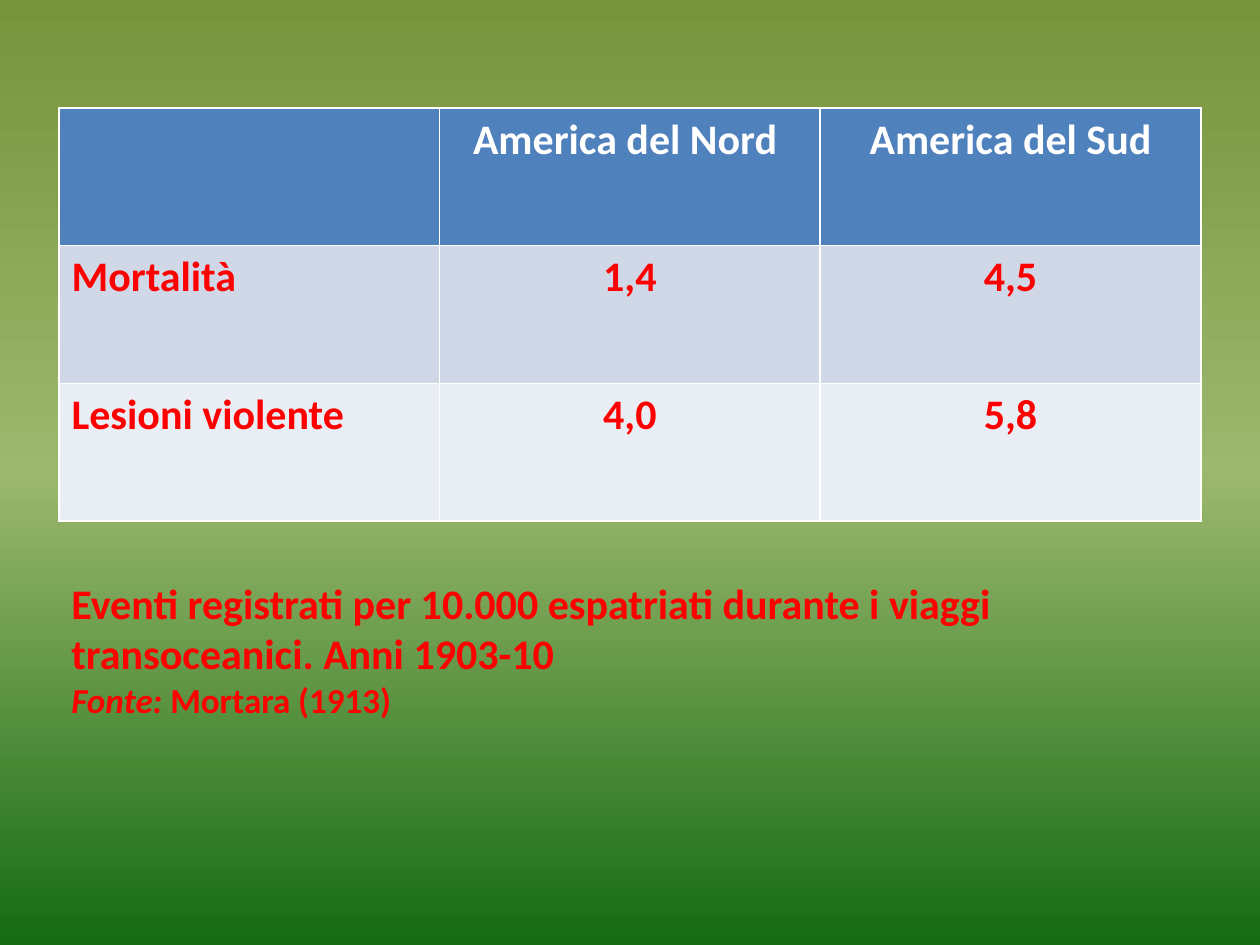
from copy import deepcopy
from dataclasses import dataclass

from pptx import Presentation
from pptx.dml.color import RGBColor as RGB
from pptx.enum.text import MSO_AUTO_SIZE as AutoSize, PP_ALIGN as Align
from pptx.oxml.ns import qn
from pptx.util import Emu, Pt


@dataclass(frozen=True)
class Theme:
    font: str = "Calibri"
    body_size: int = 24
    source_size: int = 20
    header_text: str = "FFFFFF"
    text: str = "FF0000"
    row_fills: tuple = ("4F81BD", "D0D8E8", "E9EDF4")
    backdrop: tuple = ("77933C", "9CB86E", "156B13")


THEME = Theme()
PX_PER_INCH = 126


def px(length):
    return Emu(round(length * 914400 / PX_PER_INCH))


def style_runs(paragraph, size, color):
    for run in paragraph.runs:
        run.font.name = THEME.font
        run.font.size = Pt(size)
        run.font.bold = True
        run.font.color.rgb = RGB.from_string(color)


prs = Presentation()
prs.slide_width, prs.slide_height = px(1260), px(945)
slide = prs.slides.add_slide(prs.slide_layouts[6])

# Background: vertical gradient with a third stop in the middle
backdrop = slide.background.fill
backdrop.gradient()
backdrop.gradient_angle = 270
stop_list = slide.element.find(".//" + qn("a:gsLst"))
stop_list.insert(1, deepcopy(stop_list[0]))
for i, (stop, color) in enumerate(zip(backdrop.gradient_stops, THEME.backdrop)):
    stop.position = i / 2
    stop.color.rgb = RGB.from_string(color)

# Event rates by destination
rates = [
    ("", "America del Nord ", "America del Sud"),
    ("Mortalità", "1,4", "4,5"),
    ("Lesioni violente", "4,0", "5,8"),
]
left, width = 59, 1142
rate_table = slide.shapes.add_table(
    len(rates), len(rates[0]), px(left), px(108), px(width), px(413)
).table
for r, row in enumerate(rates):
    for c, entry in enumerate(row):
        cell = rate_table.cell(r, c)
        cell.fill.solid()
        cell.fill.fore_color.rgb = RGB.from_string(THEME.row_fills[r])
        cell.text_frame.text = entry
        paragraph = cell.text_frame.paragraphs[0]
        paragraph.alignment = Align.CENTER if c else Align.LEFT
        style_runs(paragraph, THEME.body_size, THEME.text if r else THEME.header_text)

# Caption and source
caption = slide.shapes.add_textbox(px(left), px(571), px(width), px(158)).text_frame
caption.word_wrap = True
caption.auto_size = AutoSize.SHAPE_TO_FIT_TEXT
caption.text = (
    "Eventi registrati per 10.000 espatriati durante i viaggi "
    "transoceanici. Anni 1903-10"
)
style_runs(caption.paragraphs[0], THEME.body_size, THEME.text)

source = caption.add_paragraph()
for words, italic in (("Fonte: ", True), ("Mortara (1913)", False)):
    run = source.add_run()
    run.text = words
    run.font.italic = italic
style_runs(source, THEME.source_size, THEME.text)

prs.save("out.pptx")
